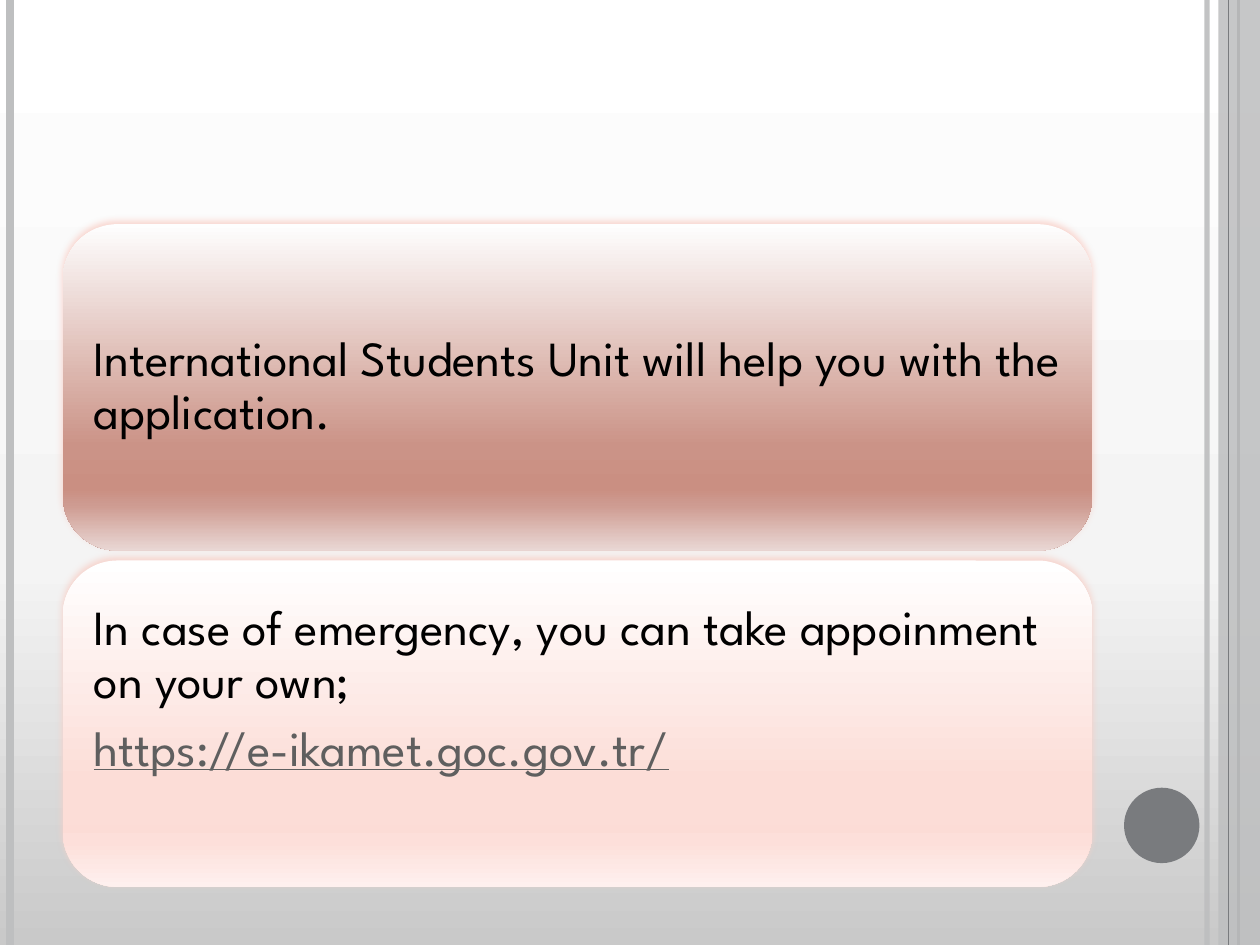
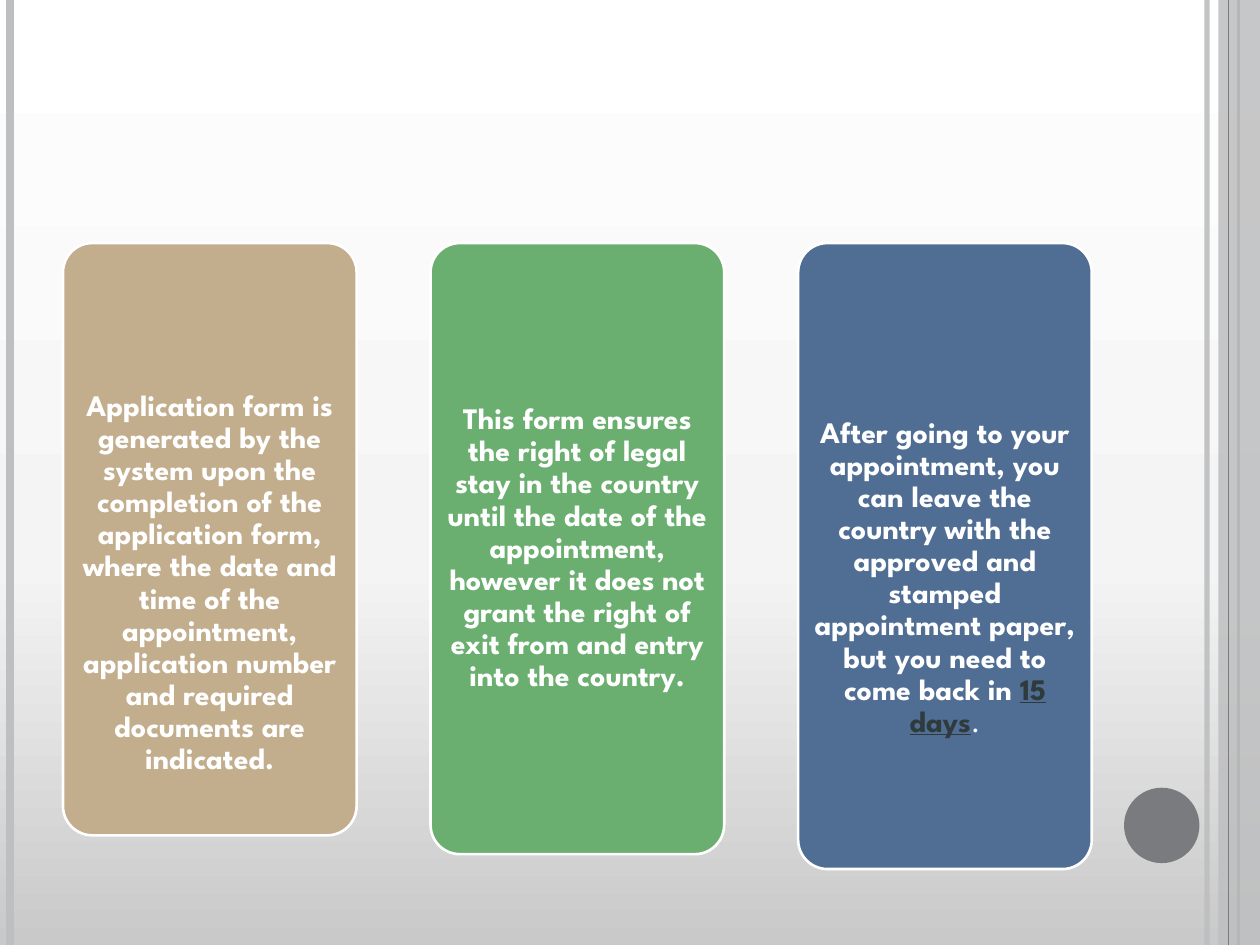
from dataclasses import dataclass
from typing import NamedTuple

from lxml.etree import SubElement
from pptx import Presentation
from pptx.dml.color import RGBColor as Rgb
from pptx.enum.shapes import MSO_CONNECTOR as Link, MSO_SHAPE as Form
from pptx.enum.text import MSO_ANCHOR as Anchor, PP_ALIGN as Align
from pptx.oxml.ns import qn
from pptx.util import Cm, Pt

Stops = tuple[tuple[int, str], ...]


@dataclass(frozen=True)
class Theme:
    font: str = "League Spartan"
    large: int = 28
    small: int = 17
    black: str = "000000"
    white: str = "FFFFFF"
    link: str = "5F5F5F"
    dark: str = "2E3A3C"
    rail: str = "BEBFC0"
    gray: str = "797B7E"
    glow: str = "F9D0C8"
    tan: str = "C2AD8D"
    green: str = "6AAF70"
    blue: str = "506E94"
    back: Stops = ((0, "C9C9C9"), (40, "F4F4F4"), (100, "FFFFFF"))
    rust: Stops = ((0, "FEFEFE"), (68, "CB9387"), (81, "CA8F82"),
                   (86, "CE9B91"), (100, "E9D7D4"))
    rose: Stops = ((0, "FFFFFF"), (68, "FCDDD7"), (81, "FCDCD6"),
                   (86, "FDDFDA"), (100, "FEF0EE"))


T = Theme()
WIDTH, HEIGHT = 25.4, 19.05
LEFT = 1.27


class Box(NamedTuple):
    x: float
    y: float
    w: float
    h: float


class Pad(NamedTuple):
    left: float
    top: float
    right: float
    bottom: float


class Run(NamedTuple):
    text: str
    color: str
    bold: bool = False
    line: bool = False


class Rail(NamedTuple):
    x: float
    color: str
    width: float
    alpha: int = 100


class Panel(NamedTuple):
    stops: Stops
    paras: list[list[Run]]
    foot: float = 0


class Card(NamedTuple):
    color: str
    h: float
    runs: list[Run]
    drop: float = 0


RAILS = [Rail(24.33, T.rail, 3, 93), Rail(0.21, T.rail, 4.5),
         Rail(24.97, T.gray, 1.5)]
INNER = Rail(24.77, T.gray, 0.75)

PANELS = [
    Panel(T.rust, [[Run("International Students Unit will help you with "
                        "the application.", T.black)]]),
    Panel(T.rose, [[Run("In case of emergency, you can take appoinment "
                        "on your own;", T.black)],
                   [Run("https://e-ikamet.goc.gov.tr/", T.link, line=True)]],
          foot=1.37),
]

CARDS = [
    Card(T.tan, 11.94, [
        Run("Application form is generated by the system upon the completion "
            "of the application form, where the date and time of the "
            "appointment, application number and required documents are "
            "indicated.", T.white, True)], drop=1.78),
    Card(T.green, 12.32, [
        Run("This form ensures the right of legal stay in the country until "
            "the date of the appointment, however it does not grant the right "
            "of exit from and entry into the country.", T.white, True)]),
    Card(T.blue, 12.62, [
        Run("After going to your appointment, you can leave the country with "
            "the approved and stamped appointment paper, but you need to come "
            "back in ", T.white, True),
        Run("15 days", T.dark, True, True),
        Run(".", T.white)], drop=0.89),
]


def rgb(color: str) -> Rgb:
    return Rgb.from_string(color)


def blend(owner, fill, stops: Stops, angle: int) -> None:
    """Fill a shape or slide with a gradient of any number of stops."""
    fill.gradient()
    fill.gradient_angle = angle
    items = next(owner.element.iter(qn("a:gsLst")))
    for old in list(items):
        items.remove(old)
    for spot, color in stops:
        stop = SubElement(items, qn("a:gs"), pos=str(spot * 1000))
        SubElement(stop, qn("a:srgbClr"), val=color)


def fade(shape, alpha: int) -> None:
    """Make the first colour of a shape partly transparent."""
    color = next(shape.element.iter(qn("a:srgbClr")))
    SubElement(color, qn("a:alpha"), val=str(alpha * 1000))


def glow(shape) -> None:
    """Lay a soft pink edge around a shape, stronger at its top."""
    effects = next(shape.element.iter(qn("a:effectLst")))
    edge = SubElement(effects, qn("a:outerShdw"), blurRad="50800",
                      dist="19050", dir="16200000", rotWithShape="0")
    color = SubElement(edge, qn("a:srgbClr"), val=T.glow)
    SubElement(color, qn("a:alpha"), val="85000")


def add_form(slide, form: Form, box: Box, color: str | None = None):
    shape = slide.shapes.add_shape(form, *map(Cm, box))
    shape.shadow.inherit = False
    shape.line.fill.background()
    if color:
        shape.fill.solid()
        shape.fill.fore_color.rgb = rgb(color)
    return shape


def add_rail(slide, rail: Rail) -> None:
    line = slide.shapes.add_connector(
        Link.STRAIGHT, Cm(rail.x), Cm(0), Cm(rail.x), Cm(HEIGHT))
    line.line.color.rgb = rgb(rail.color)
    line.line.width = Pt(rail.width)
    SubElement(line.element.spPr, qn("a:effectLst"))
    if rail.alpha < 100:
        fade(line, rail.alpha)


def write(shape, paras: list[list[Run]], size: int, align: Align,
          pad: Pad) -> None:
    frame = shape.text_frame
    frame.word_wrap = True
    frame.vertical_anchor = Anchor.MIDDLE
    frame.margin_left, frame.margin_top = Cm(pad.left), Cm(pad.top)
    frame.margin_right, frame.margin_bottom = Cm(pad.right), Cm(pad.bottom)
    for i, runs in enumerate(paras):
        para = frame.add_paragraph() if i else frame.paragraphs[0]
        para.alignment = align
        para.line_spacing = 0.9
        para.space_after = Pt(round(size * 0.31, 1))
        for item in runs:
            run = para.add_run()
            run.text = item.text
            font = run.font
            font.name, font.size = T.font, Pt(size)
            font.bold, font.underline = item.bold, item.line
            font.color.rgb = rgb(item.color)


def add_slide(deck):
    """Add a slide with the shared background, rails and disc."""
    slide = deck.slides.add_slide(deck.slide_layouts[6])
    blend(slide, slide.background.fill, T.back, 90)
    for rail in RAILS:
        add_rail(slide, rail)
    band = add_form(slide, Form.RECTANGLE, Box(24.56, 0, 0.84, HEIGHT), T.rail)
    fade(band, 87)
    add_rail(slide, INNER)
    add_form(slide, Form.OVAL, Box(22.66, 15.88, 1.52, 1.52), T.gray)
    return slide


def add_panels(slide) -> None:
    high, step, pad = 6.58, 6.78, 0.3
    for i, panel in enumerate(PANELS):
        shape = add_form(slide, Form.ROUNDED_RECTANGLE,
                         Box(LEFT, 4.52 + i * step, 20.75, high))
        blend(shape, shape.fill, panel.stops, 270)
        glow(shape)
        write(shape, panel.paras, T.large, Align.LEFT,
              Pad(pad, pad, pad, pad + panel.foot))


def add_cards(slide) -> None:
    wide, step = 5.92, 7.41
    for i, card in enumerate(CARDS):
        shape = add_form(slide, Form.ROUNDED_RECTANGLE,
                         Box(LEFT + i * step, 4.9, wide, card.h), card.color)
        shape.adjustments[0] = 0.1
        shape.line.color.rgb = rgb(T.white)
        shape.line.width = Pt(1.5)
        write(shape, [card.runs], T.small, Align.CENTER,
              Pad(0.1, 0.05 + card.drop, 0.1, 0.05))


def main() -> None:
    deck = Presentation()
    deck.slide_width, deck.slide_height = Cm(WIDTH), Cm(HEIGHT)
    add_panels(add_slide(deck))
    add_cards(add_slide(deck))
    deck.save("out.pptx")


if __name__ == "__main__":
    main()
